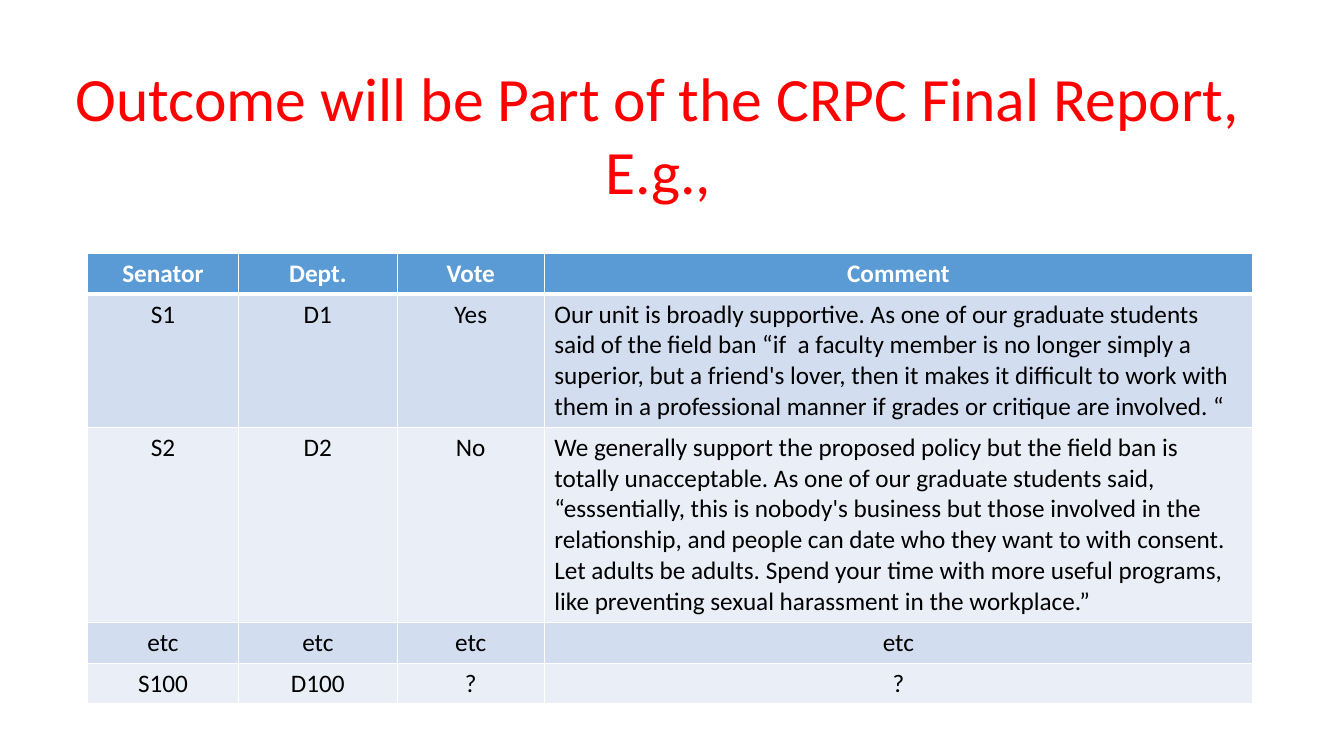
from lxml import etree
from pptx import Presentation
from pptx.dml.color import RGBColor
from pptx.enum.text import MSO_ANCHOR, MSO_AUTO_SIZE, PP_ALIGN
from pptx.oxml.ns import qn
from pptx.util import Inches, Pt

TOP = MSO_ANCHOR.TOP
FIXED = MSO_AUTO_SIZE.NONE
LEFT, CENTER = PP_ALIGN.LEFT, PP_ALIGN.CENTER
WIDE, HIGH = 13.33, 7.5
GRID = 100
TITLE_ONLY = 5

HEAD = ["Senator", "Dept.", "Vote", "Comment"]
VOTES = [
    ["S1", "D1", "Yes",
     "Our unit is broadly supportive. As one of our graduate students said of "
     "the field ban “if  a faculty member is no longer simply a superior, but "
     "a friend's lover, then it makes it difficult to work with them in a "
     "professional manner if grades or critique are involved. “"],
    ["S2", "D2", "No",
     "We generally support the proposed policy but the field ban is totally "
     "unacceptable. As one of our graduate students said, “esssentially, this "
     "is nobody's business but those involved in the relationship, and people "
     "can date who they want to with consent. Let adults be adults. Spend your "
     "time with more useful programs, like preventing sexual harassment in the "
     "workplace.”"],
    ["etc"] * 4,
    ["S100", "D100", "?", "?"],
]


def color(code):
    return RGBColor.from_string(code)


class Deck:
    font = "Calibri"
    white, black, red = "FFFFFF", "000000", "FF0000"
    blue = "5B9BD5"
    bands = ["D2DEEF", "EAEFF7"]

    def __init__(self):
        self.file = Presentation()
        self.file.slide_width = Inches(WIDE)
        self.file.slide_height = Inches(HIGH)
        self.slide = self.file.slides.add_slide(self.file.slide_layouts[TITLE_ONLY])

    def col(self, count):
        return Inches(WIDE * count / GRID)

    def row(self, count):
        return Inches(HIGH * count / GRID)

    def label(self, frame, text, size, code, align=CENTER, bold=False):
        frame.text = text
        para = frame.paragraphs[0]
        para.alignment = align
        para.line_spacing = 1.0
        para.font.name = self.font
        para.font.size = Pt(size)
        para.font.bold = bold
        para.font.color.rgb = color(code)

    def title(self, text, x, y, w, h):
        shape = self.slide.shapes.title
        shape.left, shape.top = self.col(x), self.row(y)
        shape.width, shape.height = self.col(w), self.row(h)
        frame = shape.text_frame
        frame.word_wrap = True
        frame.auto_size = FIXED
        frame.vertical_anchor = TOP
        self.label(frame, text, 44, self.red)

    def edge(self, cell, side, width):
        props = cell._tc.get_or_add_tcPr()
        line = etree.SubElement(props, qn(f"a:ln{side}"), w=str(Pt(width)))
        fill = etree.SubElement(line, qn("a:solidFill"))
        etree.SubElement(fill, qn("a:srgbClr"), val=self.white)

    def cell(self, cell, text, r):
        head = r == 0
        for side in "LRTB":
            thick = (r, side) in [(0, "B"), (1, "T")]
            self.edge(cell, side, 3 if thick else 1)
        cell.fill.solid()
        cell.fill.fore_color.rgb = color(self.blue if head else self.bands[(r - 1) % 2])
        align = LEFT if len(text) > 20 else CENTER
        self.label(cell.text_frame, text, 18, self.white if head else self.black, align, head)

    def table(self, data, x, y, widths, heights):
        table = self.slide.shapes.add_table(
            len(data), len(widths), self.col(x), self.row(y),
            self.col(sum(widths)), self.row(sum(heights))).table
        table.horz_banding = False
        for column, width in zip(table.columns, widths):
            column.width = self.col(width)
        for r, (texts, height) in enumerate(zip(data, heights)):
            table.rows[r].height = self.row(height)
            for c, text in enumerate(texts):
                self.cell(table.cell(r, c), text, r)


def main():
    deck = Deck()
    deck.table([HEAD] + VOTES, 6.5, 33.5,
               [11.25, 11.8, 10.95, 52.7], [5.4, 17.6, 25.8, 5.4, 5.4])
    deck.title("Outcome will be Part of the CRPC Final Report, E.g.,",
               4.65, 7.2, 88.65, 21.4)
    deck.file.save("out.pptx")


if __name__ == "__main__":
    main()
